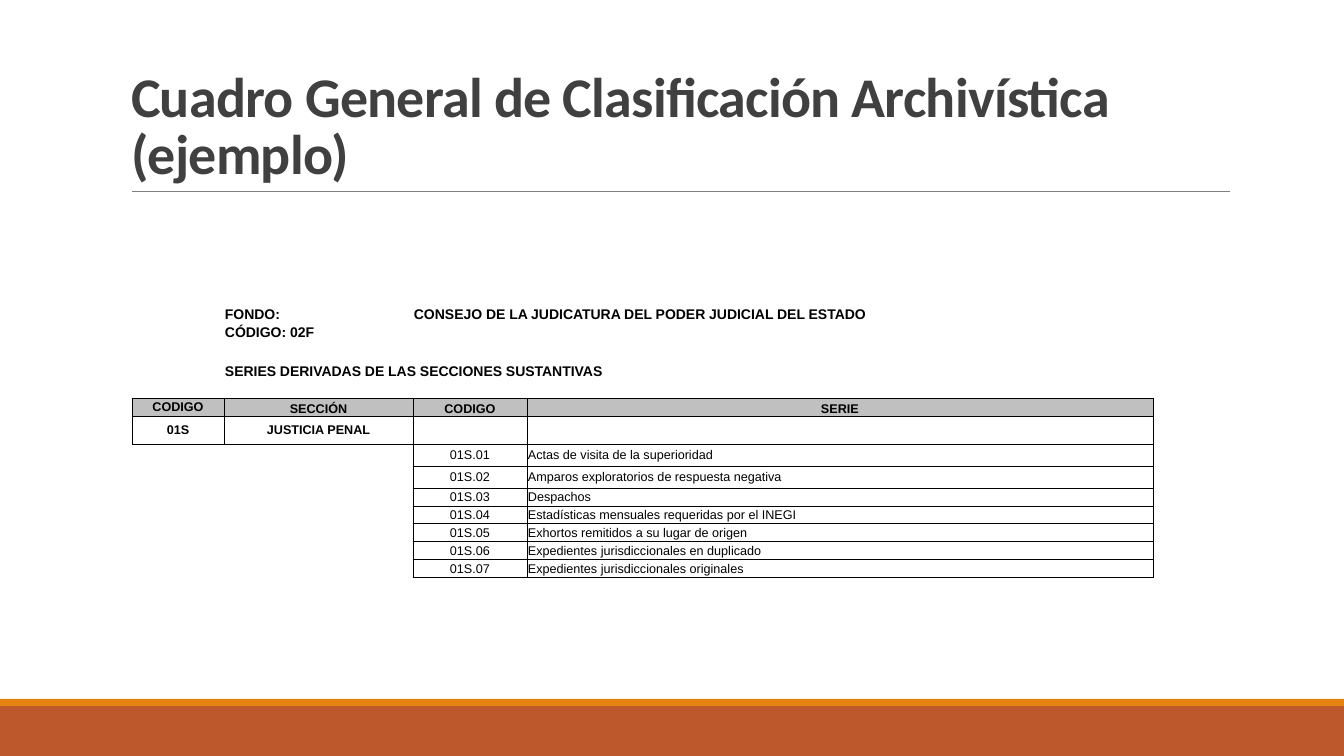
from lxml import etree
from pptx import Presentation
from pptx.dml.color import RGBColor
from pptx.enum.shapes import MSO_CONNECTOR, MSO_SHAPE
from pptx.enum.text import MSO_ANCHOR, MSO_AUTO_SIZE, PP_ALIGN
from pptx.oxml.ns import qn
from pptx.util import Emu, Pt

STRAIGHT = MSO_CONNECTOR.STRAIGHT
RECTANGLE = MSO_SHAPE.RECTANGLE
BOTTOM, MIDDLE = MSO_ANCHOR.BOTTOM, MSO_ANCHOR.MIDDLE
LEFT, CENTER = PP_ALIGN.LEFT, PP_ALIGN.CENTER
NO_AUTOFIT = MSO_AUTO_SIZE.NONE
TITLE_ONLY = 5
PLAIN_TABLE = "{2D5ABB26-0587-4C30-8999-92F81FD0307C}"
COLORS = {
    "band": "BD582C",
    "stripe": "E48312",
    "rule": "808080",
    "title": "404040",
    "text": "000000",
    "border": "000000",
    "header": "C0C0C0",
}
SLIDE_WIDTH, SLIDE_HEIGHT = 1344, 756
COLUMN_WIDTHS = [92, 189, 114, 441, 185]
ROW_HEIGHTS = [18, 18, 21, 18, 18, 18, 28, 22, 22, 18, 18, 18, 18, 18]
HEADER_ROW, SECTION_ROW, FIRST_SERIES_ROW = 5, 6, 7
HEADERS = ["CODIGO", "SECCIÓN", "CODIGO", "SERIE"]
SERIES = [
    "Actas de visita de la superioridad",
    "Amparos exploratorios de respuesta negativa",
    "Despachos",
    "Estadísticas mensuales requeridas por el INEGI",
    "Exhortos remitidos a su lugar de origen",
    "Expedientes jurisdiccionales en duplicado",
    "Expedientes jurisdiccionales originales",
]


def px(length):
    return Emu(round(length * 914400 / 100.8))


def color(name):
    return RGBColor.from_string(COLORS[name])


def add_text(paragraph, text, font_name, size, color_name, bold):
    run = paragraph.add_run()
    run.text = text
    run.font.name = font_name
    run.font.size = Pt(size)
    run.font.bold = bold
    run.font.color.rgb = color(color_name)
    return run


def add_footer(slide, left, top, width, height):
    stripe_height = 7
    bars = [
        ("band", top + stripe_height, height - stripe_height),
        ("stripe", top, stripe_height),
    ]
    for name, bar_top, bar_height in bars:
        bar = slide.shapes.add_shape(
            RECTANGLE, px(left), px(bar_top), px(width), px(bar_height))
        bar.shadow.inherit = False
        bar.fill.solid()
        bar.fill.fore_color.rgb = color(name)
        bar.line.fill.background()


def add_title(slide, left, top, width, height):
    bottom = top + height
    rule = slide.shapes.add_connector(
        STRAIGHT, px(left + 11), px(bottom), px(left + width), px(bottom))
    rule.line.color.rgb = color("rule")
    rule.line.width = Pt(0.5)
    etree.SubElement(rule._element.spPr, qn("a:effectLst"))

    title = slide.shapes.title
    title.left, title.top = px(left), px(top)
    title.width, title.height = px(width), px(height)
    frame = title.text_frame
    frame.auto_size = NO_AUTOFIT
    frame.word_wrap = True
    frame.vertical_anchor = BOTTOM
    paragraph = frame.paragraphs[0]
    paragraph.alignment = LEFT
    paragraph.line_spacing = 0.85
    run = add_text(
        paragraph, "Cuadro General de Clasificación Archivística (ejemplo)",
        "Calibri", 40, "title", True)
    run.font._element.set("spc", "-50")


def format_cell(cell):
    cell.margin_left = cell.margin_right = cell.margin_top = px(1)
    cell.margin_bottom = 0
    cell.vertical_anchor = MIDDLE
    ending = etree.SubElement(
        cell.text_frame.paragraphs[0]._p, qn("a:endParaRPr"))
    ending.set("sz", "900")


def add_borders(cell):
    properties = cell._tc.get_or_add_tcPr()
    for side in ("lnL", "lnR", "lnT", "lnB"):
        line = etree.SubElement(properties, qn(f"a:{side}"), w=str(Pt(0.5)))
        fill = etree.SubElement(line, qn("a:solidFill"))
        etree.SubElement(fill, qn("a:srgbClr"), val=COLORS["border"])


def write_cell(cell, text, size=9, bold=True, alignment=CENTER, anchor=MIDDLE):
    cell.vertical_anchor = anchor
    paragraph = cell.text_frame.paragraphs[0]
    paragraph.alignment = alignment
    add_text(paragraph, text, "Arial", size, "text", bold)


def add_classification_table(slide, left, top):
    frame = slide.shapes.add_table(
        len(ROW_HEIGHTS), len(COLUMN_WIDTHS), px(left), px(top),
        px(sum(COLUMN_WIDTHS)), px(sum(ROW_HEIGHTS)))
    next(frame._element.iter(qn("a:tableStyleId"))).text = PLAIN_TABLE
    table = frame.table
    table.first_row = table.horz_banding = False
    for column, width in zip(table.columns, COLUMN_WIDTHS):
        column.width = px(width)
    for row, height in zip(table.rows, ROW_HEIGHTS):
        row.height = px(height)

    for row_index in range(len(ROW_HEIGHTS)):
        for column_index in range(len(COLUMN_WIDTHS)):
            cell = table.cell(row_index, column_index)
            format_cell(cell)
            in_heading = row_index in (HEADER_ROW, SECTION_ROW)
            in_series = row_index >= FIRST_SERIES_ROW and column_index >= 2
            if in_heading or in_series:
                add_borders(cell)
            if row_index == HEADER_ROW:
                cell.fill.solid()
                cell.fill.fore_color.rgb = color("header")
            else:
                cell.fill.background()

    table.cell(0, 2).merge(table.cell(0, 4))
    table.cell(3, 1).merge(table.cell(3, 3))
    for row_index in range(HEADER_ROW, len(ROW_HEIGHTS)):
        table.cell(row_index, 3).merge(table.cell(row_index, 4))

    captions = [
        (0, 1, "FONDO:", MIDDLE),
        (0, 2, "CONSEJO DE LA JUDICATURA DEL PODER JUDICIAL DEL ESTADO", MIDDLE),
        (1, 1, "CÓDIGO: 02F", MIDDLE),
        (3, 1, "SERIES DERIVADAS DE LAS SECCIONES SUSTANTIVAS", BOTTOM),
    ]
    for row_index, column_index, text, anchor in captions:
        write_cell(table.cell(row_index, column_index), text,
                   size=10, alignment=LEFT, anchor=anchor)
    for column_index, text in enumerate(HEADERS):
        write_cell(table.cell(HEADER_ROW, column_index), text,
                   anchor=BOTTOM if column_index else MIDDLE)
    for column_index, text in enumerate(["01S", "JUSTICIA PENAL"]):
        write_cell(table.cell(SECTION_ROW, column_index), text)
    for number, name in enumerate(SERIES, start=1):
        row_index = FIRST_SERIES_ROW + number - 1
        write_cell(table.cell(row_index, 2), f"01S.{number:02}", bold=False)
        write_cell(table.cell(row_index, 3), name, bold=False, alignment=LEFT)


def main():
    presentation = Presentation()
    presentation.slide_width = px(SLIDE_WIDTH)
    presentation.slide_height = px(SLIDE_HEIGHT)
    slide = presentation.slides.add_slide(presentation.slide_layouts[TITLE_ONLY])
    add_footer(slide, 0, 699, SLIDE_WIDTH, 57)
    add_title(slide, 121, 31, 1109, 160)
    add_classification_table(slide, 132, 305)
    presentation.save("out.pptx")


if __name__ == "__main__":
    main()
